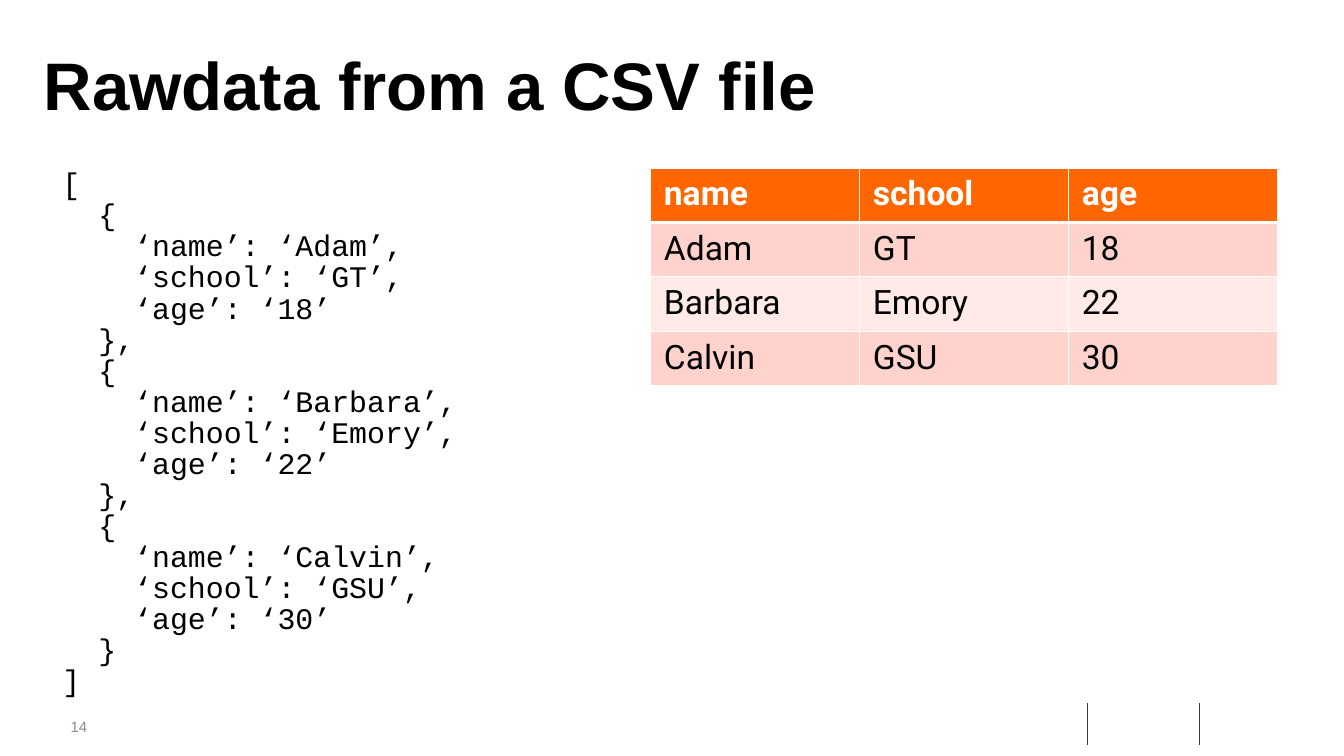
import dataclasses

import lxml.etree
import pptx
import pptx.dml.color
import pptx.enum.shapes
import pptx.enum.text
import pptx.oxml.ns
import pptx.slide
import pptx.table
import pptx.text.text
import pptx.util

COLS, ROWS = 20, 11.25
WIDTH, HEIGHT = pptx.util.Inches(20), pptx.util.Inches(11.25)
COLORS = {
    "text": "000000",
    "white": "FFFFFF",
    "number": "8C8C8C",
    "rule": "383838",
    "header": "FF6600",
    "odd": "FFD3CC",
    "even": "FFEAE7",
}
FIELDS = ("name", "school", "age")
PEOPLE = (("Adam", "GT", "18"), ("Barbara", "Emory", "22"), ("Calvin", "GSU", "30"))


@dataclasses.dataclass(frozen=True)
class Style:
    font: str
    size: float
    color: str = "text"
    bold: bool = False


@dataclasses.dataclass(frozen=True)
class Box:
    left: float
    top: float
    width: float
    height: float
    inset_x: float = 0
    inset_y: float = 0


@dataclasses.dataclass(frozen=True)
class Rule:
    left: float
    top: float
    bottom: float


TITLE = Style("Arial", 72, bold=True)
NUMBER = Style("Arial", 16, "number")
CODE = Style("Courier New", 32)
HEADER = Style("Roboto", 36, "white", True)
BODY = Style("Roboto", 36)
RULES = (Rule(16.18, 10.46, 11.09), Rule(17.85, 10.46, 11.09))


def col(n: float) -> int:
    return round(WIDTH * n / COLS)


def row(n: float) -> int:
    return round(HEIGHT * n / ROWS)


def rgb(name: str) -> pptx.dml.color.RGBColor:
    return pptx.dml.color.RGBColor.from_string(COLORS[name])


def add_run(p: pptx.text.text._Paragraph, text: str, style: Style) -> None:
    r = p.add_run()
    r.text = text
    r.font.name = style.font
    r.font.size = pptx.util.Pt(style.size)
    r.font.bold = style.bold
    r.font.color.rgb = rgb(style.color)


def add_text(s: pptx.slide.Slide, box: Box, lines: list[str], style: Style,
             spacing: float = 1, before: float = 0, middle: bool = False) -> None:
    sp = s.shapes.add_textbox(col(box.left), row(box.top), col(box.width), row(box.height))
    tf = sp.text_frame
    tf.word_wrap = True
    tf.margin_left = tf.margin_right = col(box.inset_x)
    tf.margin_top = tf.margin_bottom = row(box.inset_y)
    anchor = pptx.enum.text.MSO_ANCHOR
    tf.vertical_anchor = anchor.MIDDLE if middle else anchor.TOP
    for i, line in enumerate(lines):
        p = tf.add_paragraph() if i else tf.paragraphs[0]
        p.line_spacing = spacing
        p.space_before = pptx.util.Pt(before if i else 0)
        add_run(p, line, style)


def add_rule(s: pptx.slide.Slide, rule: Rule) -> None:
    sp = s.shapes.add_connector(
        pptx.enum.shapes.MSO_CONNECTOR.STRAIGHT,
        col(rule.left), row(rule.top), col(rule.left), row(rule.bottom))
    sp.line.color.rgb = rgb("rule")
    sp.line.width = pptx.util.Pt(1)
    lxml.etree.SubElement(sp._element.spPr, pptx.oxml.ns.qn("a:effectLst"))


def set_borders(cell: pptx.table._Cell, top: float, bottom: float) -> None:
    qn = pptx.oxml.ns.qn
    tc_pr = cell._tc.get_or_add_tcPr()
    widths = {"a:lnL": 1, "a:lnR": 1, "a:lnT": top, "a:lnB": bottom}
    for i, (tag, width) in enumerate(widths.items()):
        ln = lxml.etree.Element(qn(tag), w=str(pptx.util.Pt(width)))
        fill = lxml.etree.SubElement(ln, qn("a:solidFill"))
        lxml.etree.SubElement(fill, qn("a:srgbClr"), val=COLORS["white"])
        tc_pr.insert(i, ln)


def add_people_table(s: pptx.slide.Slide, box: Box) -> None:
    data = (FIELDS, *PEOPLE)
    table = s.shapes.add_table(
        len(data), len(FIELDS),
        col(box.left), row(box.top), col(box.width), row(box.height)).table
    for i, values in enumerate(data):
        fill = "header" if i == 0 else "odd" if i % 2 else "even"
        for j, value in enumerate(values):
            cell = table.cell(i, j)
            cell.fill.solid()
            cell.fill.fore_color.rgb = rgb(fill)
            cell.margin_left = cell.margin_right = col(box.inset_x)
            cell.margin_top = cell.margin_bottom = row(box.inset_y)
            set_borders(cell, 3 if i == 1 else 1, 3 if i == 0 else 1)
            add_run(cell.text_frame.paragraphs[0], value, BODY if i else HEADER)


def code_lines() -> list[str]:
    lines = ["["]
    for i, person in enumerate(PEOPLE, 1):
        lines.append("  {")
        for field, value in zip(FIELDS, person):
            comma = "" if field == FIELDS[-1] else ","
            lines.append(f"    ‘{field}’: ‘{value}’{comma}")
        lines.append("  }" if i == len(PEOPLE) else "  },")
    return lines + ["]"]


def main() -> None:
    prs = pptx.Presentation()
    prs.slide_width, prs.slide_height = WIDTH, HEIGHT
    s = prs.slides.add_slide(prs.slide_layouts[6])
    s.background.fill.solid()
    s.background.fill.fore_color.rgb = rgb("white")
    for rule in RULES:
        add_rule(s, rule)
    add_text(s, Box(1.05, 10.68, 0.59, 0.27), ["14"], NUMBER, middle=True)
    add_text(s, Box(0.55, 0.6, 17.9, 2.17, 0.1, 0.05), ["Rawdata from a CSV file"], TITLE)
    add_text(s, Box(0.73, 2.5, 8.78, 10.08, 0.2, 0.1), code_lines(), CODE, 0.7, 6.4)
    add_people_table(s, Box(9.68, 2.5, 9.33, 3.24, 0.2, 0.1))
    prs.save("out.pptx")


if __name__ == "__main__":
    main()
